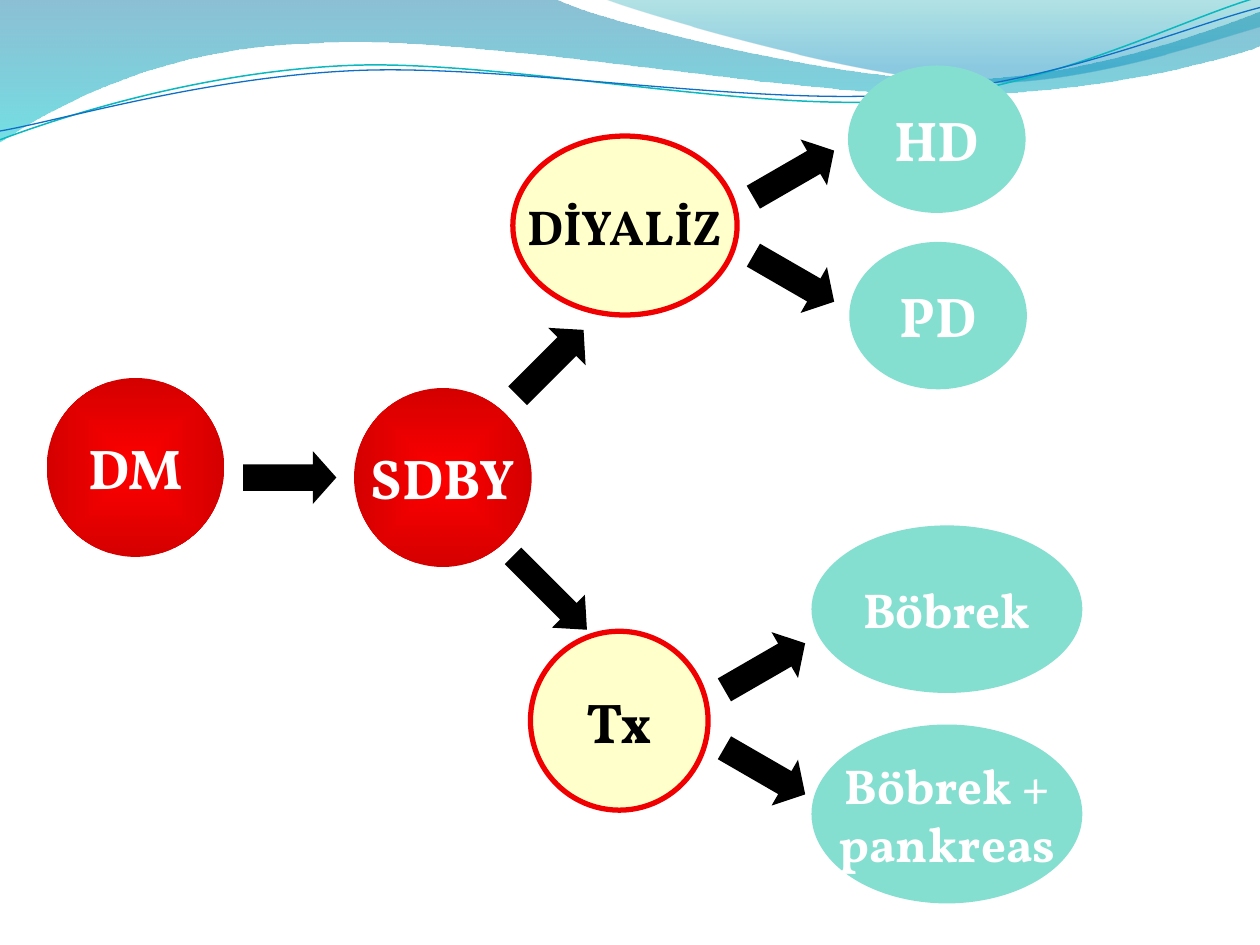
import pptx
import pptx.util
import pptx.dml.color
import pptx.enum.shapes
import pptx.enum.text
import pptx.oxml
import pptx.oxml.ns

Inches = pptx.util.Inches
RGBColor = pptx.dml.color.RGBColor
SHAPES = pptx.enum.shapes.MSO_SHAPE
qn = pptx.oxml.ns.qn
A_NS = pptx.oxml.ns.nsdecls("a")

WHITE = RGBColor(0xFF, 0xFF, 0xFF)
BLACK = RGBColor(0x00, 0x00, 0x00)
RED = RGBColor(0xFF, 0x00, 0x00)
DARK_RED = RGBColor(0xD4, 0x00, 0x00)
RING_RED = RGBColor(0xF0, 0x00, 0x00)
CREAM = RGBColor(0xFF, 0xFF, 0xCC)
MINT = RGBColor(0x85, 0xDF, 0xD0)
WAVE_BLUE = RGBColor(0x00, 0x74, 0xA1)
WAVE_CYAN = RGBColor(0x00, 0xC6, 0xCF)
WAVE_TEAL = RGBColor(0x00, 0xA1, 0xA9)
WAVE_SKY = RGBColor(0x00, 0x8B, 0xBF)
LINE_TEAL = RGBColor(0x0A, 0xB8, 0xBF)
LINE_BLUE = RGBColor(0x0F, 0x6F, 0xC6)

deck = pptx.Presentation()
deck.slide_width, deck.slide_height = Inches(10), Inches(7.5)
slide = deck.slides.add_slide(deck.slide_layouts[6])


def add_wave(start, segments, closed):
    """Draw a run of lines (one point) and Bézier curves (three points)."""
    outline = slide.shapes.build_freeform(Inches(start[0]), Inches(start[1]))
    outline.add_line_segments([(Inches(x), Inches(y)) for *_, (x, y) in segments],
                              close=closed)
    wave = outline.convert_to_shape()
    wave.shadow.inherit = False
    # Bend the straight segments that have control points
    straight = wave.element.spPr.findall(".//" + qn("a:lnTo"))
    for line, segment in zip(straight, segments):
        if len(segment) == 3:
            knots = "".join(f'<a:pt x="{Inches(x) - wave.left}" y="{Inches(y) - wave.top}"/>'
                            for x, y in segment)
            line.getparent().replace(line, pptx.oxml.parse_xml(
                f"<a:cubicBezTo {A_NS}>{knots}</a:cubicBezTo>"))
    return wave


def add_node(text, left, top, width, height, fill, size=32, color=WHITE, ring=None):
    """Draw an ellipse with bold centred text; two fill colours shade from the centre."""
    node = slide.shapes.add_shape(SHAPES.OVAL, Inches(left), Inches(top),
                                  Inches(width), Inches(height))
    node.shadow.inherit = False
    if isinstance(fill, RGBColor):
        node.fill.solid()
        node.fill.fore_color.rgb = fill
    else:
        node.fill.gradient()
        for stop, shade in zip(node.fill.gradient_stops, fill):
            stop.color.rgb = shade
        linear = node.element.spPr.find(".//" + qn("a:lin"))
        linear.getparent().replace(linear, pptx.oxml.parse_xml(
            f'<a:path {A_NS} path="shape">'
            '<a:fillToRect l="50000" t="50000" r="50000" b="50000"/></a:path>'))
    if ring is None:
        node.line.fill.background()
    else:
        node.line.color.rgb = ring
        node.line.width = pptx.util.Pt(3)
    frame = node.text_frame
    frame.word_wrap = False
    frame.vertical_anchor = pptx.enum.text.MSO_ANCHOR.MIDDLE
    frame.text = text
    for paragraph in frame.paragraphs:
        paragraph.alignment = pptx.enum.text.PP_ALIGN.CENTER
        font = paragraph.runs[0].font
        font.name, font.size, font.bold = "Vollkorn", pptx.util.Pt(size), True
        font.color.rgb = color


# Translucent waves along the top: start, segments, stops (position, colour, opacity %)
bands = [
    ((0, 0),
     [[(4.4, -0.01)],
      [(4.76, 0.17), (6.64, 0.63), (7.58, 0.63)],
      [(8.53, 0.63), (9.58, 0.26), (10, 0.09)],
      [(10.01, 0.36)],
      [(9.83, 0.44), (8.7, 0.76), (7.46, 0.75)],
      [(6.22, 0.75), (3.82, 0.28), (2.57, 0.34)],
      [(1.29, 0.36), (0.46, 0.83), (-0.01, 1.13)]],
     [(0, WAVE_BLUE, 45), (1, WAVE_CYAN, 55)]),
    ((4.79, -0.01),
     [[(5.09, 0.11), (6.82, 0.62), (7.69, 0.65)],
      [(8.56, 0.69), (9.61, 0.32), (10, 0.21)],
      [(10, 0)]],
     [(0, WAVE_TEAL, 30), (0.8, WAVE_SKY, 45)]),
]
for start, segments, shades in bands:
    band = add_wave(start, segments, closed=True)
    band.line.fill.background()
    band.fill.gradient()
    band.fill.gradient_angle = 270
    for stop, (position, shade, opacity) in zip(band.fill.gradient_stops, shades):
        stop.position = position
        stop.color.rgb = shade
    colors = band.element.spPr.findall(".//" + qn("a:srgbClr"))
    for color, (position, shade, opacity) in zip(colors, shades):
        color.append(pptx.oxml.parse_xml(f'<a:alpha {A_NS} val="{opacity * 1000}"/>'))

# Thin lines that follow the waves
strands = [
    ((0, 1.11),
     [[(0.48, 0.93), (1.58, 0.57), (2.77, 0.52)],
      [(3.95, 0.47), (5.93, 0.89), (7.13, 0.8)],
      [(8.33, 0.71), (9.38, 0.15), (9.98, -0.02)]], LINE_TEAL, 0.85),
    ((0, 1.04),
     [[(0.47, 0.96), (1.64, 0.61), (2.83, 0.56)],
      [(4.03, 0.51), (5.97, 0.84), (7.17, 0.75)],
      [(8.36, 0.67), (9.41, 0.21), (10, 0.06)]], LINE_BLUE, 0.75),
]
for start, segments, color, weight in strands:
    strand = add_wave(start, segments, closed=False)
    strand.fill.background()
    strand.line.color.rgb = color
    strand.line.width = pptx.util.Pt(weight)

# Disease stages
add_node("DM", 0.37, 3, 1.41, 1.42, fill=(RED, DARK_RED))
add_node("SDBY", 2.81, 3.08, 1.41, 1.42, fill=(RED, DARK_RED))

# Treatments
add_node("DİYALİZ", 4.07, 1.08, 1.78, 1.42, fill=CREAM, size=28, color=BLACK, ring=RING_RED)
add_node("Tx", 4.21, 5.01, 1.41, 1.42, fill=CREAM, color=BLACK, ring=RING_RED)

# Arrows: left, top, width, height, rotation, head length
arrows = [
    (1.93, 3.58, 0.74, 0.42, 0, 0.445),
    (3.95, 4.52, 0.83, 0.37, 45, 0.563),
    (4, 2.67, 0.74, 0.42, 315, 0.445),
]
for left, top in ((5.93, 1.17), (5.7, 5.08)):
    arrows.append((left, top, 0.74, 0.42, 330, 0.445))
    arrows.append((left, top + 0.83, 0.74, 0.42, 30, 0.445))
for left, top, width, height, rotation, head in arrows:
    arrow = slide.shapes.add_shape(SHAPES.RIGHT_ARROW, Inches(left), Inches(top),
                                   Inches(width), Inches(height))
    arrow.shadow.inherit = False
    arrow.rotation = rotation
    arrow.adjustments[0], arrow.adjustments[1] = 0.5, head
    arrow.fill.solid()
    arrow.fill.fore_color.rgb = BLACK
    arrow.line.fill.background()

# Options under each treatment
add_node("HD", 6.73, 0.52, 1.41, 1.17, fill=MINT)
add_node("PD", 6.74, 1.92, 1.41, 1.17, fill=MINT)
add_node("Böbrek", 6.44, 4.17, 2.15, 1.33, fill=MINT, size=28)
add_node("Böbrek +\npankreas", 6.44, 5.75, 2.15, 1.42, fill=MINT, size=28)

deck.save("out.pptx")
